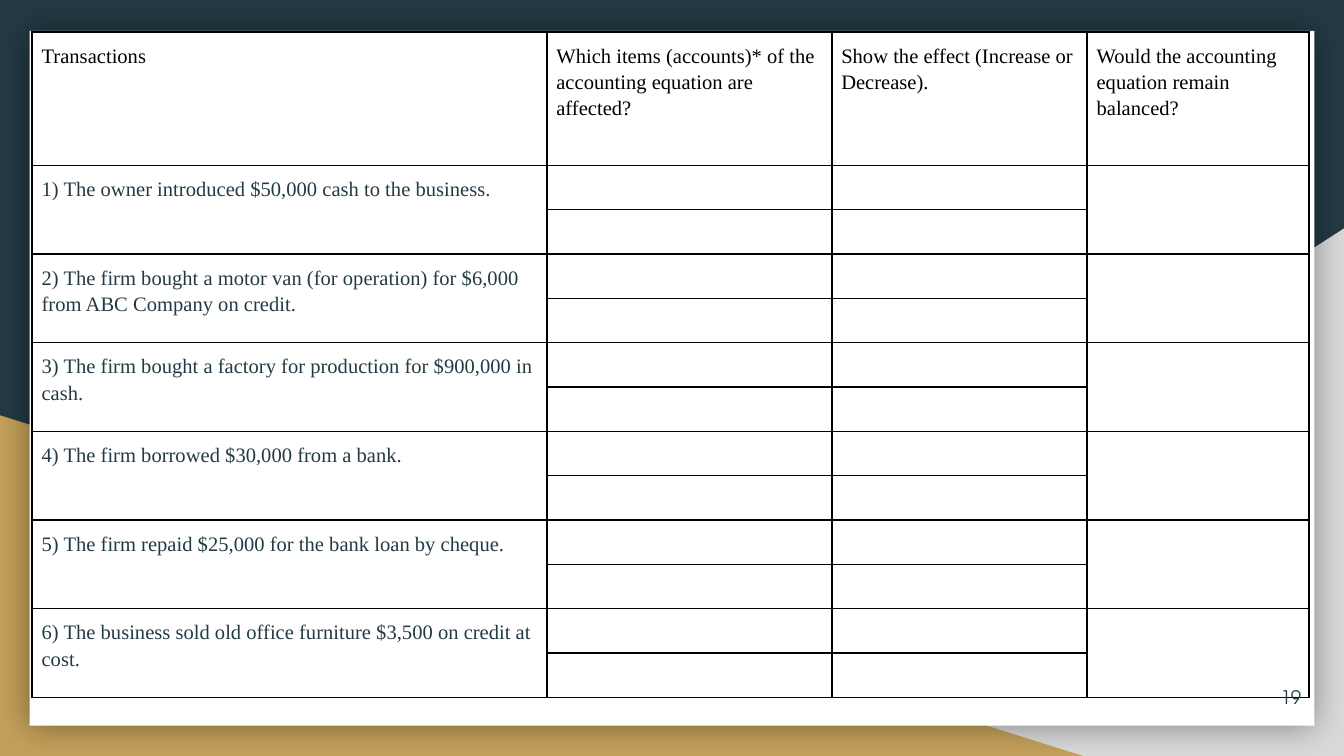
import pptx
import pptx.util
import pptx.dml.color
import pptx.enum.shapes
import pptx.enum.text
import pptx.oxml
import pptx.oxml.ns
from lxml import etree
from pptx.dml.color import RGBColor
from pptx.util import Inches

# Content
HEADERS = [
    "Transactions",
    "Which items (accounts)* of the accounting equation are affected?",
    "Show the effect (Increase or Decrease).",
    "Would the accounting equation remain balanced?",
]
TRANSACTIONS = [
    "1) The owner introduced $50,000 cash to the business.",
    "2) The firm bought a motor van (for operation) for $6,000 from ABC Company on credit.",
    "3) The firm bought a factory for production for $900,000 in cash.",
    "4) The firm borrowed $30,000 from a bank.",
    "5) The firm repaid $25,000 for the bank loan by cheque.",
    "6) The business sold old office furniture $3,500 on credit at cost.",
]
PAGE_NUMBER = "19"

# Format
NAVY = RGBColor(0x23, 0x3A, 0x44)
GOLD = RGBColor(0xC4, 0xA1, 0x5A)
GREY = RGBColor(0xD9, 0xD9, 0xD9)
WHITE = RGBColor(0xFF, 0xFF, 0xFF)
BLACK = RGBColor(0, 0, 0)
WIDTH = 10
HEIGHT = WIDTH * 9 / 16
TRIANGLES = [
    (GREY, [(WIDTH, HEIGHT), (3.92, HEIGHT), (WIDTH, 1.7)]),
    (GOLD, [(0, HEIGHT), (8.06, HEIGHT), (0, 3.09)]),
]
COLUMN_WIDTHS = [3.83, 2.12, 1.9, 1.65]
HEADER_HEIGHT, HALF_ROW = 0.99, 0.33
TABLE_LEFT, TABLE_TOP = 0.24, 0.24
CELL_MARGIN = 0.07


def write(frame, text, font, size, color, align=None, spacing=None):
    para = frame.paragraphs[0]
    para.alignment = align
    para.line_spacing = spacing
    span = para.add_run()
    span.text = text
    span.font.name = font
    span.font.size = pptx.util.Pt(size)
    span.font.color.rgb = color


def paint(shape, color):
    shape.shadow.inherit = False
    shape.fill.solid()
    shape.fill.fore_color.rgb = color
    shape.line.fill.background()


def add_glow(shape):
    effects = shape._element.spPr.find(pptx.oxml.ns.qn("a:effectLst"))
    effects.append(pptx.oxml.parse_xml(
        f'<a:outerShdw {pptx.oxml.ns.nsdecls("a")} blurRad="{pptx.util.Pt(18)}" dist="0">'
        '<a:srgbClr val="000000"><a:alpha val="40000"/></a:srgbClr></a:outerShdw>'))


def format_cell(cell):
    cell.fill.background()
    cell.margin_left = cell.margin_right = Inches(CELL_MARGIN)
    cell.margin_top = cell.margin_bottom = Inches(CELL_MARGIN)
    properties = cell._tc.get_or_add_tcPr()
    for position, side in enumerate(("lnL", "lnR", "lnT", "lnB")):
        properties.insert(position, pptx.oxml.parse_xml(
            f'<a:{side} {pptx.oxml.ns.nsdecls("a")} w="{pptx.util.Pt(1)}">'
            f'<a:solidFill><a:srgbClr val="{BLACK}"/></a:solidFill></a:{side}>'))
    # Small type in blank cells keeps the rows low
    if not cell.text_frame.text:
        etree.SubElement(cell.text_frame.paragraphs[0]._p,
                         pptx.oxml.ns.qn("a:endParaRPr"), sz="800")


deck = pptx.Presentation()
deck.slide_width, deck.slide_height = Inches(WIDTH), Inches(HEIGHT)
page = deck.slides.add_slide(deck.slide_layouts[6])

# Background and white card
page.background.fill.solid()
page.background.fill.fore_color.rgb = NAVY
for color, corners in TRIANGLES:
    points = [(Inches(x), Inches(y)) for x, y in corners]
    builder = page.shapes.build_freeform(*points[0])
    builder.add_line_segments(points[1:], close=True)
    paint(builder.convert_to_shape(), color)
card = page.shapes.add_shape(pptx.enum.shapes.MSO_SHAPE.RECTANGLE,
                             Inches(0.22), Inches(0.23), Inches(9.56), Inches(5.17))
paint(card, WHITE)
add_glow(card)

# Worksheet table: two half rows for each transaction
row_count = 1 + 2 * len(TRANSACTIONS)
table = page.shapes.add_table(
    row_count, len(HEADERS), Inches(TABLE_LEFT), Inches(TABLE_TOP),
    Inches(sum(COLUMN_WIDTHS)), Inches(HEADER_HEIGHT + HALF_ROW * (row_count - 1))).table
table.first_row = table.horz_banding = False
for column, width in zip(table.columns, COLUMN_WIDTHS):
    column.width = Inches(width)
for index, row in enumerate(table.rows):
    row.height = Inches(HALF_ROW if index else HEADER_HEIGHT)

table_font = dict(font="Times New Roman", size=11, spacing=1.15)
for index, text in enumerate(HEADERS):
    write(table.cell(0, index).text_frame, text, color=BLACK, **table_font)
for index, text in enumerate(TRANSACTIONS):
    top = 1 + 2 * index
    for column in (0, len(HEADERS) - 1):
        table.cell(top, column).merge(table.cell(top + 1, column))
    write(table.cell(top, 0).text_frame, text, color=NAVY, **table_font)
for cell in table.iter_cells():
    format_cell(cell)

# Page number
box = page.shapes.add_textbox(Inches(9.41), Inches(5), Inches(0.37), Inches(0.37))
frame = box.text_frame
frame.word_wrap = False
frame.vertical_anchor = pptx.enum.text.MSO_ANCHOR.MIDDLE
frame.margin_left = frame.margin_right = Inches(0.1)
frame.margin_top = frame.margin_bottom = Inches(0.1)
write(frame, PAGE_NUMBER, font="TeX Gyre Adventor", size=10, color=NAVY,
      align=pptx.enum.text.PP_ALIGN.RIGHT)

deck.save("out.pptx")
